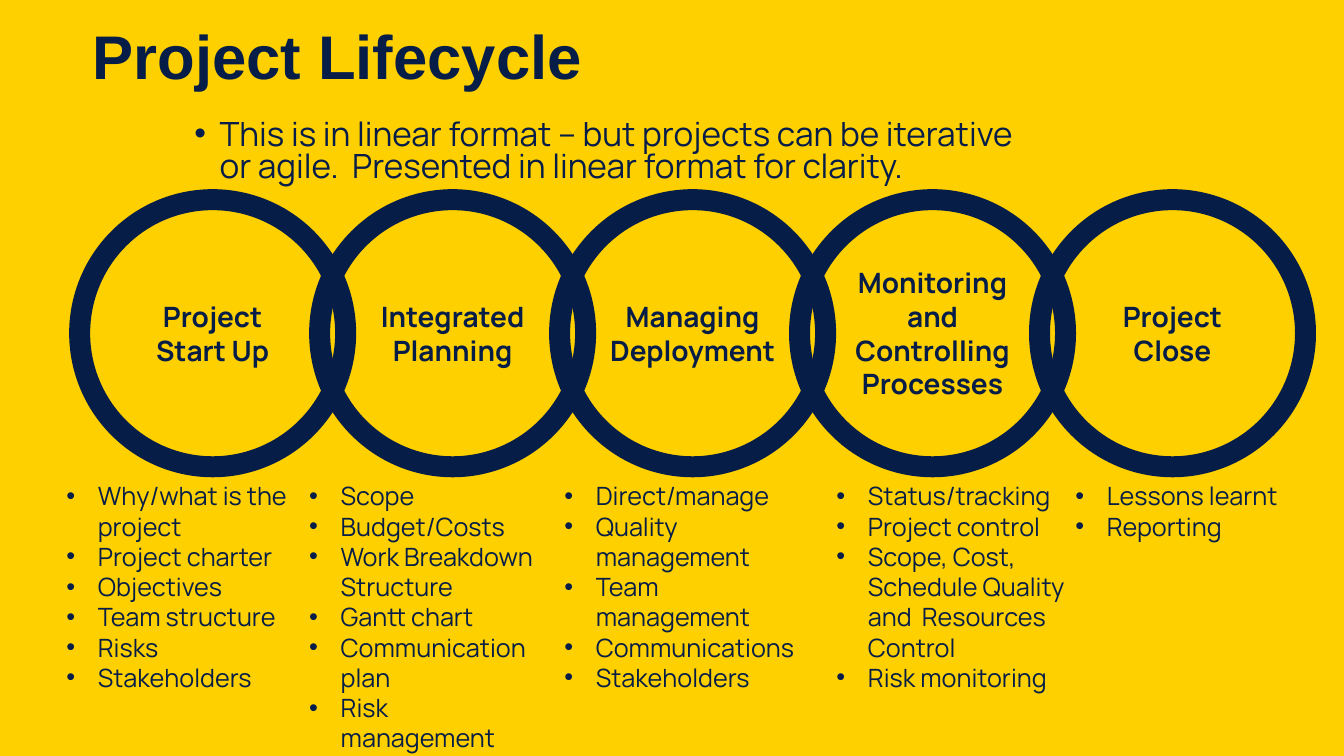
from lxml import etree
from pptx import Presentation
from pptx.dml.color import RGBColor
from pptx.enum.shapes import MSO_SHAPE
from pptx.enum.text import MSO_ANCHOR, PP_ALIGN
from pptx.oxml.ns import qn
from pptx.util import Pt

ELLIPSE = MSO_SHAPE.OVAL
TOP, MIDDLE = MSO_ANCHOR.TOP, MSO_ANCHOR.MIDDLE
LEFT, CENTER = PP_ALIGN.LEFT, PP_ALIGN.CENTER
COLORS = {"yellow": "FFD000", "navy": "061D48", "body": "071D49"}


def write(sp, lines, size, font="Manrope", color="navy", bold=False,
          align=LEFT, anchor=TOP, spacing=1.0, indent=0):
    """Fill a shape with paragraphs; a positive indent adds bullets."""
    tf = sp.text_frame
    tf.word_wrap = True
    tf.vertical_anchor = anchor
    for i, line in enumerate(lines):
        p = tf.paragraphs[0] if i == 0 else tf.add_paragraph()
        if indent:
            pPr = p._p.get_or_add_pPr()
            pPr.set("marL", str(Pt(indent)))
            pPr.set("indent", str(-Pt(indent)))
            etree.SubElement(pPr, qn("a:buFont")).set("typeface", "Arial")
            etree.SubElement(pPr, qn("a:buChar")).set("char", "•")
        p.alignment = align
        p.line_spacing = spacing
        r = p.add_run()
        r.text = line
        r.font.name = font
        r.font.size = Pt(size)
        r.font.bold = bold
        r.font.color.rgb = RGBColor.from_string(COLORS[color])


prs = Presentation()
prs.slide_width, prs.slide_height = Pt(960), Pt(540)
s = prs.slides.add_slide(prs.slide_layouts[6])
s.background.fill.solid()
s.background.fill.fore_color.rgb = RGBColor.from_string(COLORS["yellow"])

# Title and introduction
title = s.shapes.add_textbox(Pt(59), Pt(-9.4), Pt(707), Pt(104.4))
write(title, ["Project Lifecycle"], 44, font="Arial", bold=True,
      anchor=MIDDLE, spacing=0.9)
intro = s.shapes.add_textbox(Pt(131.8), Pt(82.8), Pt(616.3), Pt(58.3))
write(intro, ["This is in linear format – but projects can be iterative or agile.  "
              "Presented in linear format for clarity."],
      23.8, color="body", spacing=0.8, indent=18)

# Phases: name, left and width of the task list, tasks
phases = [
    ("Project Start Up", 40.3, 183,
     ["Why/what is the project", "Project charter", "Objectives",
      "Team structure", "Risks", "Stakeholders"]),
    ("Integrated Planning", 213.8, 183,
     ["Scope", "Budget/Costs", "Work Breakdown Structure", "Gantt chart",
      "Communication plan", "Risk management"]),
    ("Managing Deployment", 396, 190,
     ["Direct/manage", "Quality management", "Team management",
      "Communications", "Stakeholders"]),
    ("Monitoring and Controlling Processes", 590.4, 183,
     ["Status/tracking", "Project control",
      "Scope, Cost, Schedule Quality and  Resources Control",
      "Risk monitoring"]),
    ("Project Close", 761, 171.4, ["Lessons learnt", "Reporting"]),
]

# Linked rings with a task list under each
RING_LEFT, RING_STEP = 56.9, 171.4
for i, (name, left, width, tasks) in enumerate(phases):
    ring = s.shapes.add_shape(ELLIPSE, Pt(RING_LEFT + i * RING_STEP), Pt(142.6),
                              Pt(190), Pt(190.8))
    ring.shadow.inherit = False
    ring.fill.background()
    ring.line.color.rgb = RGBColor.from_string(COLORS["navy"])
    ring.line.width = Pt(15)
    write(ring, [name], 20, bold=True, align=CENTER, anchor=MIDDLE)

    task_box = s.shapes.add_textbox(Pt(left), Pt(339.8), Pt(width), Pt(160))
    write(task_box, tasks, 18, indent=22.5)

prs.save("out.pptx")
